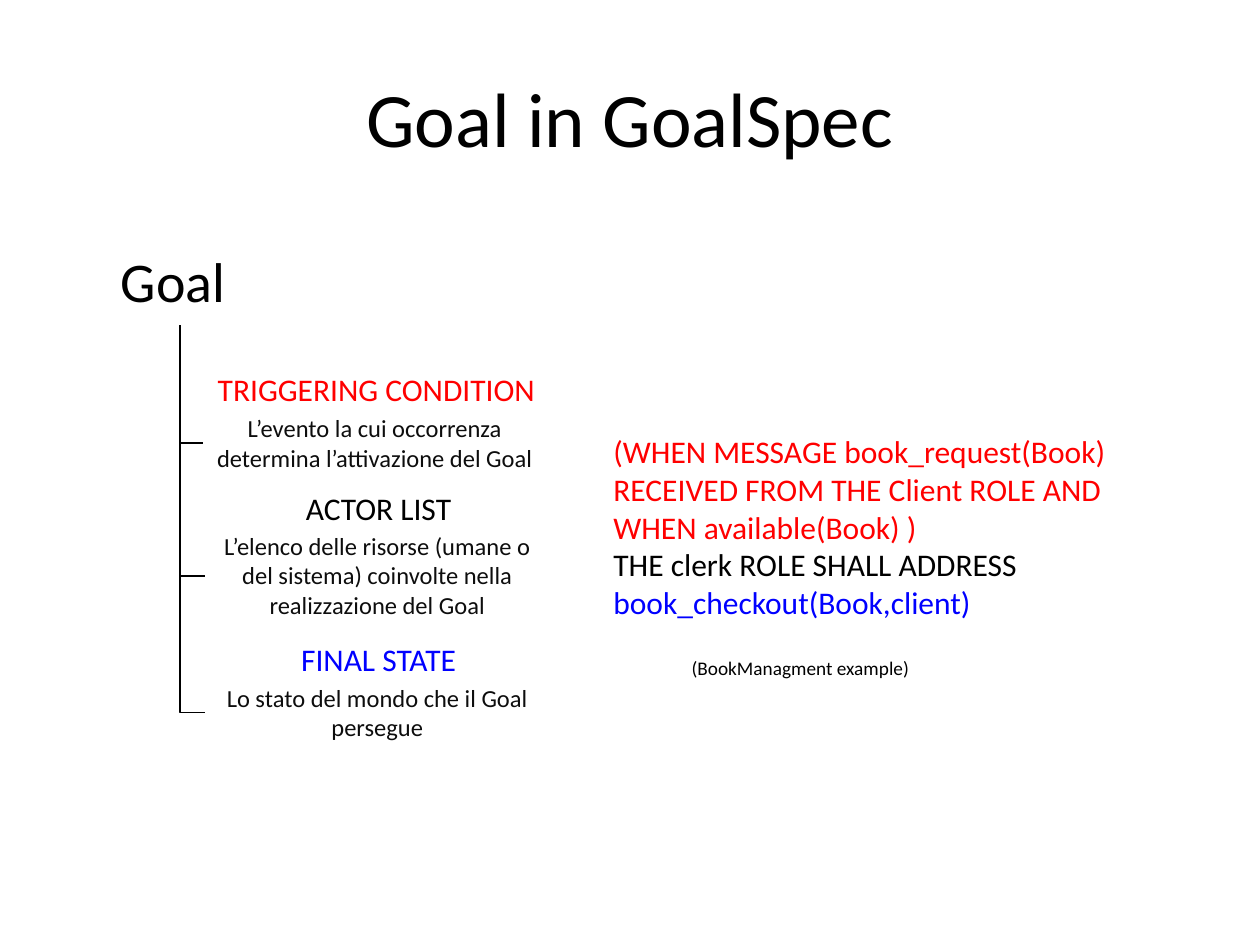
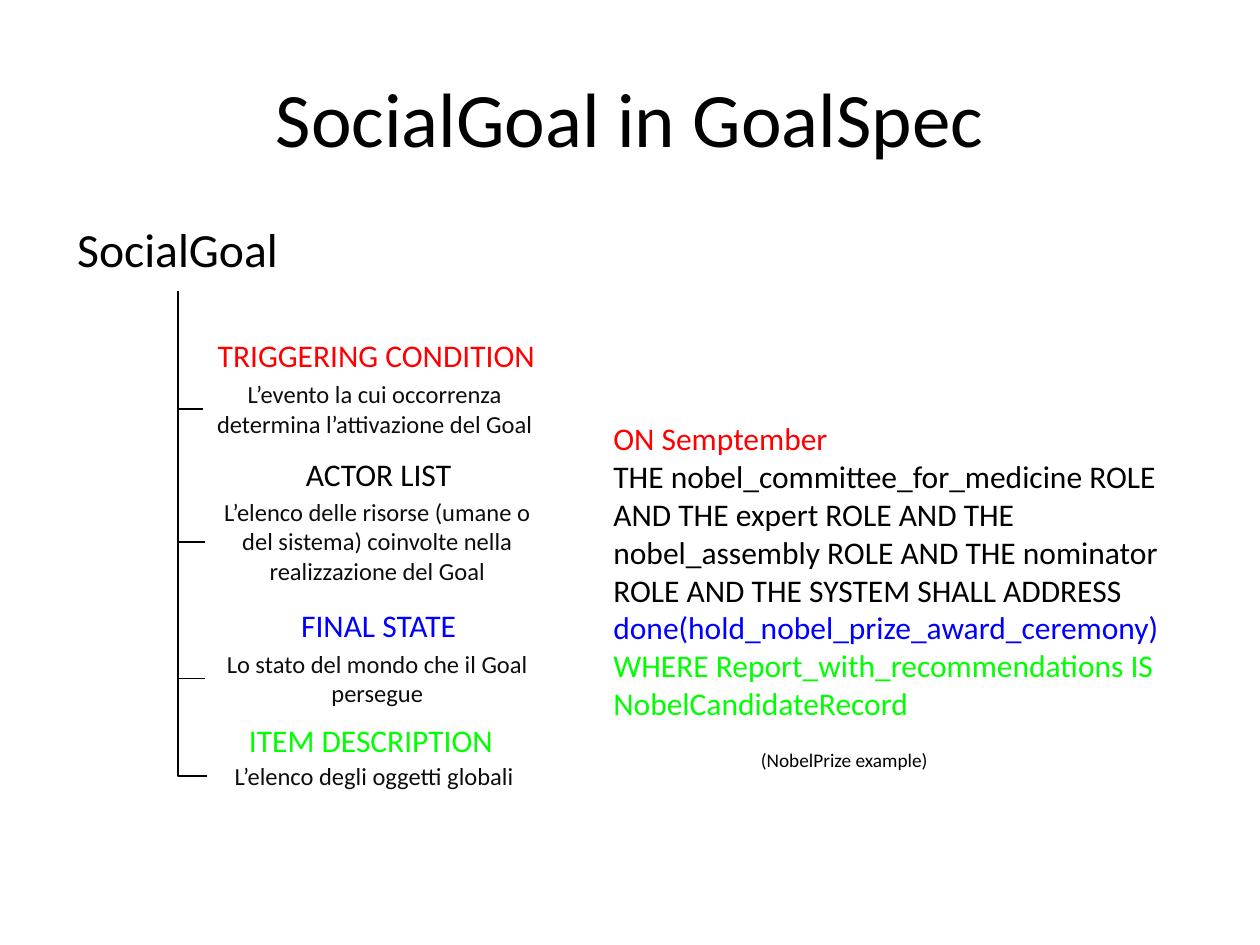
from pptx import Presentation
from pptx.dml.color import RGBColor
from pptx.enum import shapes, text
from pptx.oxml.ns import qn
from pptx.util import Inches, Pt
from lxml import etree

COLUMNS, ROWS = 100, 75
CELL = Inches(10) // COLUMNS
FONT = "Calibri"
BLACK, GREY, RED, BLUE, GREEN = "000000", "0D0D0D", "FF0000", "0000FF", "00FF00"
LEFT, CENTER = text.PP_ALIGN.LEFT, text.PP_ALIGN.CENTER
TOP, MIDDLE = text.MSO_ANCHOR.TOP, text.MSO_ANCHOR.MIDDLE

TRIGGER = dict(
    heading="TRIGGERING CONDITION", color=RED, align=LEFT,
    detail="L’evento la cui occorrenza determina l’attivazione del Goal",
    heading_at=(16.3, 0), detail_at=(16.1, 3.4, 27.3, 5.7))
ACTORS = dict(
    heading="ACTOR LIST", color=BLACK, align=CENTER,
    detail="L’elenco delle risorse (umane o del sistema) coinvolte nella realizzazione del Goal",
    heading_at=(16.4, 9.4), detail_at=(16.3, 12.75, 27.3, 8.1))
FINAL = dict(
    heading="FINAL STATE", color=BLUE, align=CENTER,
    detail="Lo stato del mondo che il Goal persegue",
    heading_at=(16.4, 21.4), detail_at=(16.3, 24.8, 27.3, 5.7))
ITEM = dict(
    heading="ITEM DESCRIPTION", color=GREEN, align=CENTER,
    detail="L’elenco degli oggetti globali",
    heading_at=(15.8, 30.5), detail_at=(16.4, 33.7, 26.6, 3.4))


def rgb(value):
    return RGBColor.from_string(value)


def cells(*counts):
    return [round(count * CELL) for count in counts]


def add_text(slide, area, content, size=18, color=BLACK, align=LEFT, anchor=TOP):
    frame = slide.shapes.add_textbox(*cells(*area)).text_frame
    frame.word_wrap = True
    frame.vertical_anchor = anchor
    paragraphs = [[(content, color)]] if isinstance(content, str) else content
    for index, runs in enumerate(paragraphs):
        paragraph = frame.add_paragraph() if index else frame.paragraphs[0]
        paragraph.alignment = align
        for wording, shade in runs:
            run = paragraph.add_run()
            run.text = wording
            run.font.name = FONT
            run.font.size = Pt(size)
            run.font.color.rgb = rgb(shade)


def add_branch(slide, start, end):
    (x1, y1), (x2, y2) = start, end
    across, down = x2 - x1, y2 - y1
    left = (x1 + x2 - down) / 2
    top = (y1 + y2 - across) / 2
    branch = slide.shapes.add_connector(
        shapes.MSO_CONNECTOR.ELBOW, *cells(left, top, left + down, top + across))
    branch.line.color.rgb = rgb(BLACK)
    branch.line.width = Pt(1)
    properties = branch._element.spPr
    properties.find(qn("a:prstGeom")).set("prst", "bentConnector2")
    transform = properties.find(qn("a:xfrm"))
    transform.set("rot", "16200000")
    transform.set("flipH", "1")
    etree.SubElement(properties, qn("a:effectLst"))


def add_section(slide, section, first_row, trunk):
    x, y = section["heading_at"]
    add_text(slide, (x, first_row + y, 27.3, 4), section["heading"],
             color=section["color"], align=section["align"])
    x, y, width, height = section["detail_at"]
    y += first_row
    add_text(slide, (x, y, width, height), section["detail"],
             size=14, color=GREY, align=CENTER)
    add_branch(slide, trunk, (x, y + height / 2))


def add_goal_slide(deck, title, label, label_at, label_format, sections,
                   statement, statement_at, example, example_at):
    slide = deck.slides.add_slide(deck.slide_layouts[6])
    add_text(slide, (5, 3, 90, 12.5), title, size=44, align=CENTER, anchor=MIDDLE)
    add_text(slide, label_at, label, **label_format)
    x, y, width, height = label_at
    trunk = (x + width / 2, y + height)
    for section in sections:
        add_section(slide, section, trunk[1] + 3.1, trunk)
    add_text(slide, statement_at, statement)
    add_text(slide, example_at, example, size=11)


def main():
    deck = Presentation()
    deck.slide_width, deck.slide_height = cells(COLUMNS, ROWS)
    add_goal_slide(
        deck, "Goal in GoalSpec", "Goal", (8.6, 19.1, 11.4, 6.7), dict(size=32),
        [TRIGGER, ACTORS, FINAL],
        [[("(WHEN MESSAGE book_request(Book) RECEIVED FROM THE Client ROLE "
           "AND WHEN available(Book) )", RED)],
         [("THE clerk ROLE SHALL ADDRESS ", BLACK),
          ("book_checkout(Book,client)", BLUE)]],
        (47.7, 33.8, 43, 16.2),
        "(BookManagment example)", (53.9, 51.6, 19.5, 2.9))
    add_goal_slide(
        deck, "SocialGoal in GoalSpec", "SocialGoal", (4.7, 16.4, 18.8, 6.7),
        dict(size=27.2, align=CENTER, anchor=MIDDLE),
        [TRIGGER, ACTORS, FINAL, ITEM],
        [[("ON Semptember", RED)],
         [("THE nobel_committee_for_medicine ROLE AND THE expert ROLE AND THE "
           "nobel_assembly ROLE AND THE nominator ROLE AND THE SYSTEM SHALL ADDRESS",
           BLACK)],
         [("done(hold_nobel_prize_award_ceremony)", BLUE)],
         [("WHERE Report_with_recommendations IS NobelCandidateRecord", GREEN)]],
        (47.7, 32.8, 47.7, 25.2),
        "(NobelPrize example)", (59.4, 58.9, 15.6, 2.9))
    deck.save("out.pptx")


if __name__ == "__main__":
    main()
